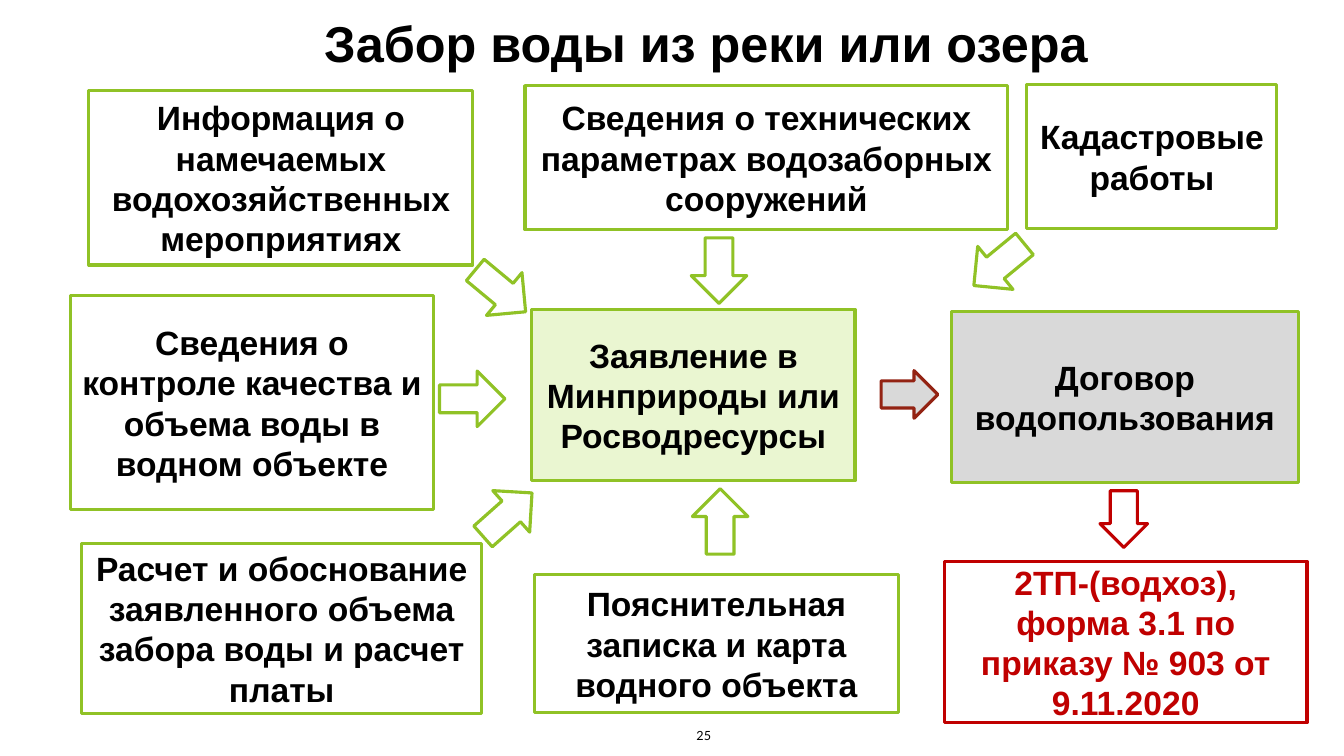
from pptx import Presentation
from pptx.dml.color import RGBColor
from pptx.enum.shapes import MSO_SHAPE as Shape
from pptx.enum.text import MSO_ANCHOR as Anchor, PP_ALIGN as Align
from pptx.util import Cm, Pt

# Content: lengths in cm, boxes as (text, style, left, top, width, height)
TITLE = ("Забор воды из реки или озера", 7.54, 0.18, 20.52, 1.8)
PAGE = ("25", 16.26, 18.03, 1.91, 1.02)
BOXES = [
    ("Информация о намечаемых водохозяйственных мероприятиях", "input", 2.24, 2.29, 9.68, 4.39),
    ("Сведения о технических параметрах водозаборных сооружений", "input", 13.23, 2.16, 12.17, 3.63),
    ("Кадастровые работы", "input", 25.88, 2.13, 6.3, 3.63),
    ("Сведения о контроле качества и объема воды в водном объекте", "input", 1.78, 7.44, 9.14, 5.41),
    ("Заявление в Минприроды или Росводресурсы", "application", 13.4, 7.8, 8.15, 4.32),
    ("Договор водопользования", "contract", 23.98, 7.85, 8.74, 4.32),
    ("Расчет и обоснование заявленного объема забора воды и расчет платы", "input", 2.06, 13.69, 10.08, 4.29),
    ("Пояснительная записка и карта водного объекта", "input", 13.46, 14.48, 9.19, 3.48),
    ("2ТП-(водхоз), форма 3.1 по приказу № 903 от 9.11.2020", "report", 23.8, 14.15, 9.14, 4.06),
]
# Arrows: style, centre x, centre y, heading in degrees clockwise from up
ARROWS = [
    ("input", 12.61, 7.33, 129.7),
    ("input", 18.12, 6.82, 180),
    ("input", 25.18, 6.67, 230.6),
    ("input", 11.9, 10.05, 90),
    ("input", 12.79, 12.97, 48.4),
    ("input", 18.15, 13.14, 0),
    ("result", 22.92, 9.94, 90),
    ("report", 28.32, 13.08, 180),
]
ARROW_SIZE = {"input": (1.4, 1.65, 0.5)}  # width, height, shaft share
RESULT_ARROW = (1.2, 1.43, 0.57)

THEME = {
    "font": "Arial", "page_font": "Lato",
    "title": 36, "body": 24, "page": 9, "line": 2.25,
    "text": "000000",
    # style: fill, line, text
    "input": ("FFFFFF", "90C226", "000000"),
    "application": ("EAF6D1", "90C226", "000000"),
    "contract": ("D9D9D9", "90C226", "000000"),
    "result": ("D9D9D9", "932313", "000000"),
    "report": (None, "C00000", "C00000"),
}


def write(s, text, color, size, font=THEME["font"], bold=True,
          align=Align.CENTER, anchor=Anchor.MIDDLE):
    tf = s.text_frame
    tf.word_wrap = True
    tf.vertical_anchor = anchor
    p = tf.paragraphs[0]
    p.alignment = align
    r = p.add_run()
    r.text = text
    for name, value in {"name": font, "size": Pt(size), "bold": bold}.items():
        setattr(r.font, name, value)
    r.font.color.rgb = RGBColor.from_string(color)


def add_figure(slide, kind, style, frame):
    fill, line, _ = THEME[style]
    s = slide.shapes.add_shape(kind, *map(Cm, frame))
    s.shadow.inherit = False
    if fill:
        s.fill.solid()
        s.fill.fore_color.rgb = RGBColor.from_string(fill)
    else:
        s.fill.background()
    s.line.color.rgb = RGBColor.from_string(line)
    s.line.width = Pt(THEME["line"])
    return s


def main():
    prs = Presentation()
    prs.slide_width, prs.slide_height = Cm(33.87), Cm(19.05)
    slide = prs.slides.add_slide(prs.slide_layouts[6])

    # Title
    text, *frame = TITLE
    s = slide.shapes.add_textbox(*map(Cm, frame))
    write(s, text, THEME["text"], THEME["title"], anchor=Anchor.TOP)

    # Arrows, placed by centre and turned to their heading
    for style, x, y, heading in ARROWS:
        w, h, shaft = ARROW_SIZE.get(style, RESULT_ARROW)
        s = add_figure(slide, Shape.UP_ARROW, style, (x - w / 2, y - h / 2, w, h))
        s.adjustments[0], s.adjustments[1] = shaft, 0.5
        s.rotation = heading

    # Boxes
    for text, style, *frame in BOXES:
        s = add_figure(slide, Shape.RECTANGLE, style, frame)
        write(s, text, THEME[style][2], THEME["body"])

    # Page number
    text, *frame = PAGE
    s = slide.shapes.add_textbox(*map(Cm, frame))
    write(s, text, THEME["text"], THEME["page"], THEME["page_font"], False, Align.RIGHT)

    prs.save("out.pptx")


if __name__ == "__main__":
    main()
